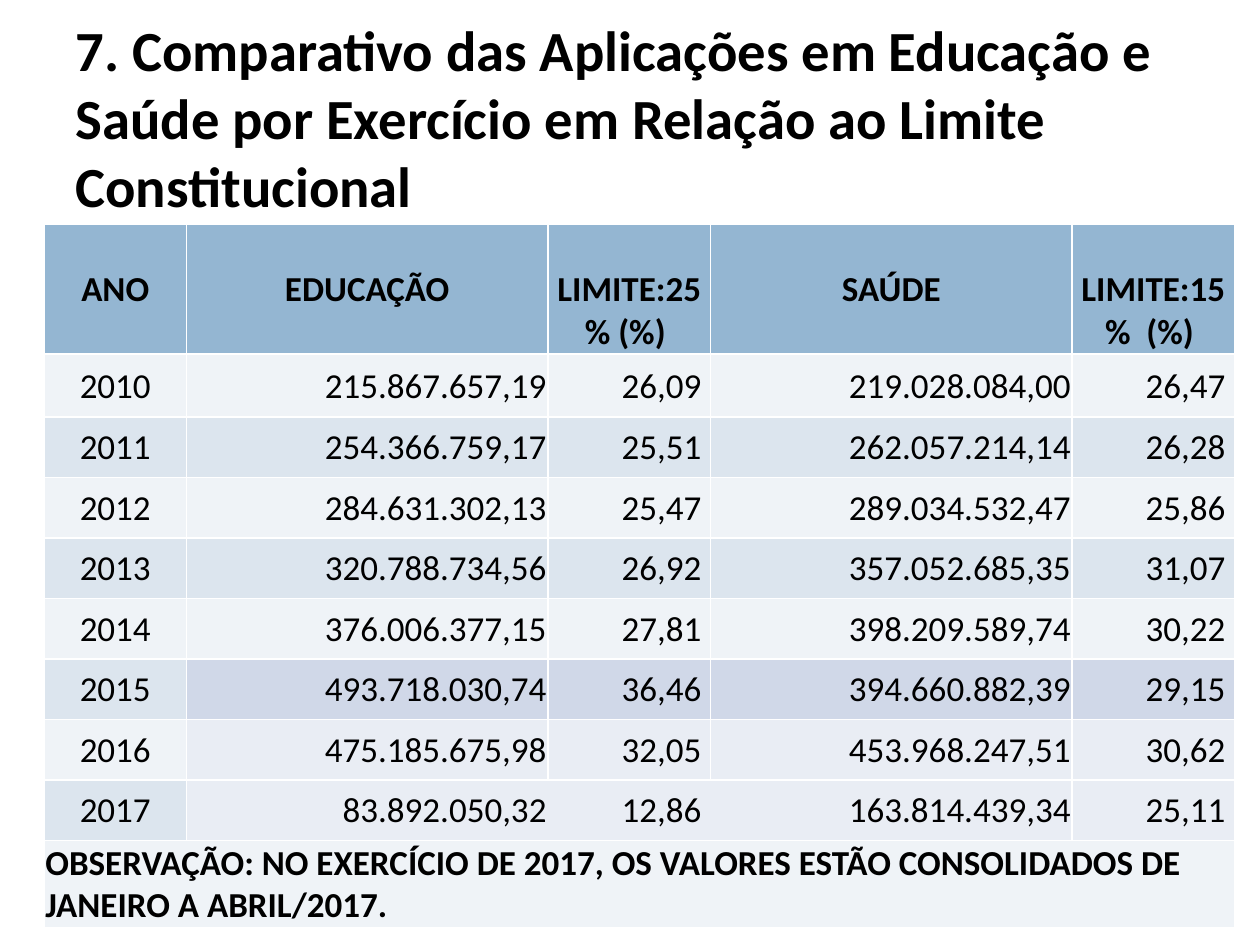
from lxml.etree import SubElement
from pptx import Presentation
from pptx.dml.color import RGBColor
from pptx.enum.text import MSO_ANCHOR, MSO_AUTO_SIZE, PP_ALIGN
from pptx.oxml.ns import qn
from pptx.util import Inches, Pt

# Content
TITLE = ("7. Comparativo das Aplicações em Educação e Saúde por Exercício "
         "em Relação ao Limite Constitucional")
HEADERS = ["ANO", "EDUCAÇÃO", " LIMITE:25% (%) ", "SAÚDE", " LIMITE:15%  (%) "]
YEARS = [
    ("2010", "215.867.657,19", "26,09", "219.028.084,00", "26,47"),
    ("2011", "254.366.759,17", "25,51", "262.057.214,14", "26,28"),
    ("2012", "284.631.302,13", "25,47", "289.034.532,47", "25,86"),
    ("2013", "320.788.734,56", "26,92", "357.052.685,35", "31,07"),
    ("2014", "376.006.377,15", "27,81", "398.209.589,74", "30,22"),
    ("2015", "493.718.030,74", "36,46", "394.660.882,39", "29,15"),
    ("2016", "475.185.675,98", "32,05", "453.968.247,51", "30,62"),
    ("2017", "83.892.050,32", "12,86", "163.814.439,34", "25,11"),
]
NOTE = ("OBSERVAÇÃO: NO EXERCÍCIO DE 2017, OS VALORES ESTÃO CONSOLIDADOS "
        "DE JANEIRO A ABRIL/2017.")

# Style and grid, in inches
COLORS = {"text": "000000", "border": "FFFFFF", "header": "94B6D2",
          "light": "EFF3F7", "dark": "DCE5EE",
          "value_2015": "D0D8E8", "value_recent": "E9EDF4"}
VALUE_FILLS = {"2015": "value_2015", "2016": "value_recent", "2017": "value_recent"}
OPEN_EDGES = {1: "R", 2: "LR", 3: "L"}  # column: edges without a line in 2017
FONT = "Calibri"
PERCENT_COLUMNS = (2, 4)
COLUMN_WIDTHS = [1.13, 2.87, 1.29, 2.87, 1.29]
ROW_HEIGHTS = [0.99, 0.5] + [0.48] * 7 + [0.66]


def color(name):
    return RGBColor.from_string(COLORS[name])


def write(frame, text, size, bold, alignment):
    paragraph = frame.paragraphs[0]
    paragraph.alignment = alignment
    run = paragraph.add_run()
    run.text = text
    run.font.name = FONT
    run.font.size = Pt(size)
    run.font.bold = bold
    run.font.color.rgb = color("text")


def add_borders(cell, open_edges):
    properties = cell._tc.get_or_add_tcPr()
    for edge in "LRTB":
        line = SubElement(properties, qn(f"a:ln{edge}"), w=str(Pt(1)))
        if edge in open_edges:
            SubElement(line, qn("a:noFill"))
        else:
            fill = SubElement(line, qn("a:solidFill"))
            SubElement(fill, qn("a:srgbClr"), val=COLORS["border"])


def fill_cell(cell, text, fill, alignment, bold=False, open_edges=""):
    cell.vertical_anchor = MSO_ANCHOR.MIDDLE
    cell.margin_left = cell.margin_right = cell.margin_top = Inches(0.01)
    cell.margin_bottom = 0
    add_borders(cell, open_edges)
    cell.fill.solid()
    cell.fill.fore_color.rgb = color(fill)
    write(cell.text_frame, text, 20, bold, alignment)


presentation = Presentation()
presentation.slide_width, presentation.slide_height = Inches(10), Inches(7.5)
slide = presentation.slides.add_slide(presentation.slide_layouts[5])

# Title
title = slide.shapes.title
title.left, title.top = Inches(0.5), Inches(0.3)
title.width, title.height = Inches(9), Inches(1.25)
title.text_frame.word_wrap = True
title.text_frame.auto_size = MSO_AUTO_SIZE.NONE
title.text_frame.vertical_anchor = MSO_ANCHOR.MIDDLE
write(title.text_frame, TITLE, 32.4, True, PP_ALIGN.LEFT)

# Table grid
table = slide.shapes.add_table(
    len(ROW_HEIGHTS), len(COLUMN_WIDTHS), Inches(0.35), Inches(1.78),
    Inches(sum(COLUMN_WIDTHS)), Inches(sum(ROW_HEIGHTS))).table
for column, width in zip(table.columns, COLUMN_WIDTHS):
    column.width = Inches(width)
for row, height in zip(table.rows, ROW_HEIGHTS):
    row.height = Inches(height)

# Header row
for column, text in enumerate(HEADERS):
    fill_cell(table.cell(0, column), text, "header", PP_ALIGN.CENTER, bold=True)

# One row per year
for row, values in enumerate(YEARS, start=1):
    year = values[0]
    band = "light" if row % 2 else "dark"
    for column, value in enumerate(values):
        fill_cell(
            table.cell(row, column),
            f" {value} " if column in PERCENT_COLUMNS else value,
            VALUE_FILLS.get(year, band) if column else band,
            PP_ALIGN.RIGHT if column else PP_ALIGN.CENTER,
            open_edges=OPEN_EDGES.get(column, "") if year == "2017" else "")

# Note across the last row
last_row = len(ROW_HEIGHTS) - 1
note_cell = table.cell(last_row, 0)
note_cell.merge(table.cell(last_row, len(COLUMN_WIDTHS) - 1))
fill_cell(note_cell, NOTE, "light", PP_ALIGN.LEFT, bold=True)

presentation.save("out.pptx")
